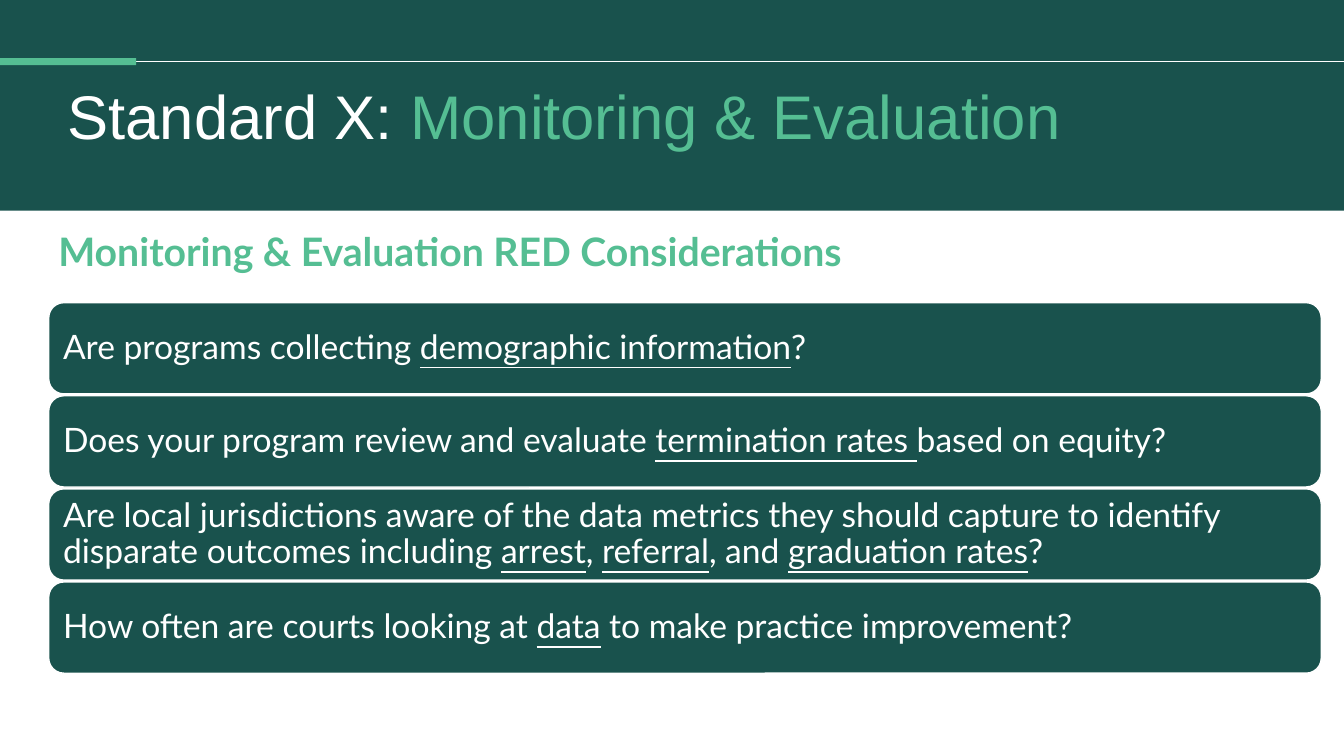
from dataclasses import dataclass

from lxml.etree import SubElement
from pptx import Presentation
from pptx.dml.color import RGBColor
from pptx.enum.shapes import MSO_CONNECTOR, MSO_SHAPE
from pptx.enum.text import MSO_ANCHOR, MSO_AUTO_SIZE, PP_ALIGN
from pptx.oxml.ns import qn
from pptx.shapes.autoshape import Shape
from pptx.slide import Slide
from pptx.util import Pt

COLORS = {"dark": "19524D", "mint": "55BE93", "white": "FFFFFF"}


@dataclass
class Run:
    """A piece of text with its own look."""
    text: str
    color: str = "white"
    under: bool = False
    bold: bool = False


@dataclass
class Box:
    """A place on the slide, in points."""
    left: float
    top: float
    width: float
    height: float

    def lengths(self) -> tuple[Pt, Pt, Pt, Pt]:
        """Return the four sides as lengths."""
        return Pt(self.left), Pt(self.top), Pt(self.width), Pt(self.height)


CARDS = [
    [Run("Are programs collecting "), Run("demographic information", under=True), Run("?")],
    [Run("Does your program review and evaluate "), Run("termination rates ", under=True),
     Run("based on equity?")],
    [Run("Are local jurisdictions aware of the data metrics they should capture to identify "
         "disparate outcomes including "),
     Run("arrest", under=True), Run(", "), Run("referral", under=True), Run(", and "),
     Run("graduation rates", under=True), Run("?")],
    [Run("How often are courts looking at "), Run("data", under=True),
     Run(" to make practice improvement?")],
]


def paint(name: str) -> RGBColor:
    """Look up a colour by name."""
    return RGBColor.from_string(COLORS[name])


def write(shape: Shape, runs: list[Run], font: str, size: float, anchor: MSO_ANCHOR) -> None:
    """Fill a shape with one left-aligned paragraph."""
    frame = shape.text_frame
    frame.word_wrap = True
    frame.auto_size = MSO_AUTO_SIZE.NONE
    frame.vertical_anchor = anchor
    frame.margin_left = frame.margin_right = Pt(7.2)
    frame.margin_top = frame.margin_bottom = Pt(3.6)
    para = frame.paragraphs[0]
    para.alignment = PP_ALIGN.LEFT
    para.line_spacing = 0.9
    para.space_before = Pt(0)
    for item in runs:
        run = para.add_run()
        run.text = item.text
        run.font.name = font
        run.font.size = Pt(size)
        run.font.bold = item.bold
        run.font.underline = item.under
        run.font.color.rgb = paint(item.color)


def block(slide: Slide, kind: MSO_SHAPE, box: Box, fill: str, edge: bool = False) -> Shape:
    """Draw a filled shape, with a thin white edge if asked."""
    shape = slide.shapes.add_shape(kind, *box.lengths())
    shape.shadow.inherit = False
    shape.fill.solid()
    shape.fill.fore_color.rgb = paint(fill)
    if edge:
        shape.line.color.rgb = paint("white")
        shape.line.width = Pt(1)
    else:
        shape.line.fill.background()
    return shape


def header(slide: Slide) -> None:
    """Draw the top band, its rule and accent, and the title."""
    block(slide, MSO_SHAPE.RECTANGLE, Box(0, 0, 960, 150.5), "dark")
    rule = slide.shapes.add_connector(MSO_CONNECTOR.STRAIGHT, Pt(0), Pt(44), Pt(960), Pt(44))
    rule.line.color.rgb = paint("white")
    rule.line.width = Pt(0.5)
    SubElement(rule.element.spPr, qn("a:effectLst"))
    block(slide, MSO_SHAPE.RECTANGLE, Box(0, 41.5, 97.2, 5), "mint")
    title = slide.shapes.title
    slide.shapes.element.append(title.element)
    title.left, title.top, title.width, title.height = Box(41, 58.3, 822, 67).lengths()
    runs = [Run("Standard X: "), Run("Monitoring & Evaluation", "mint")]
    write(title, runs, "Arial", 44, MSO_ANCHOR.TOP)


def main() -> None:
    """Build the slide and save it."""
    deck = Presentation()
    deck.slide_width, deck.slide_height = Pt(960), Pt(540)
    slide = deck.slides.add_slide(deck.slide_layouts[5])
    header(slide)
    lead = slide.shapes.add_textbox(*Box(34.6, 162.7, 802, 40).lengths())
    runs = [Run("Monitoring & Evaluation RED Considerations", "mint", bold=True)]
    write(lead, runs, "Lato", 28, MSO_ANCHOR.TOP)
    for row, runs in enumerate(CARDS):
        box = Box(34.8, 216.2 + 66.5 * row, 909, 65.2)
        card = block(slide, MSO_SHAPE.ROUNDED_RECTANGLE, box, "dark", edge=True)
        write(card, runs, "Lato", 24, MSO_ANCHOR.MIDDLE)
    deck.save("out.pptx")


if __name__ == "__main__":
    main()
